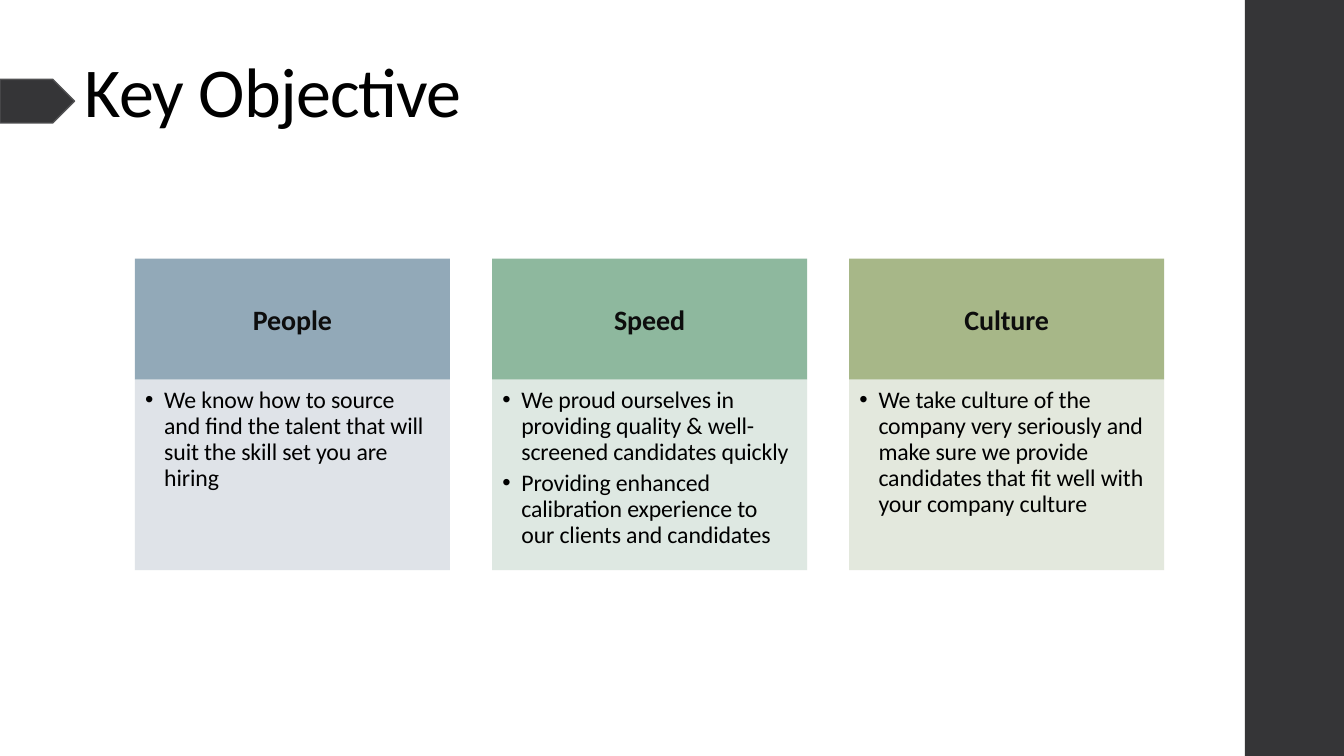
from dataclasses import dataclass

from lxml import etree
from pptx import Presentation
from pptx.dml.color import RGBColor
from pptx.enum.shapes import MSO_SHAPE
from pptx.enum.text import MSO_ANCHOR, PP_ALIGN
from pptx.oxml.ns import qn
from pptx.util import Cm, Pt

RECT, PENTAGON = MSO_SHAPE.RECTANGLE, MSO_SHAPE.PENTAGON
TOP, MIDDLE = MSO_ANCHOR.TOP, MSO_ANCHOR.MIDDLE
LEFT, CENTER = PP_ALIGN.LEFT, PP_ALIGN.CENTER


@dataclass(frozen=True)
class Theme:
    font: str = "Calibri"
    dark: str = "353537"
    edge: str = "505052"
    text: str = "000000"
    heading: str = "0D0D0D"
    title_size: float = 50
    heading_size: float = 20
    body_size: float = 17


# Heading, header colour, body colour, bullets
CARDS = [
    ("People", "92A9B8", "DCE1E6", [
        "We know how to source\nand find the talent that will\n"
        "suit the skill set you are\nhiring"]),
    ("Speed", "8EB89E", "DBE6DF", [
        "We proud ourselves in\nproviding quality & well-\n"
        "screened candidates quickly",
        "Providing enhanced\ncalibration experience to\n"
        "our clients and candidates"]),
    ("Culture", "A7B788", "E0E6DA", [
        "We take culture of the\ncompany very seriously and\n"
        "make sure we provide\ncandidates that fit well with\n"
        "your company culture"]),
]
CARD_LEFT, CARD_TOP, CARD_WIDTH, CARD_PITCH = 3.4, 6.52, 7.94, 9.0
HEADER_HEIGHT, BODY_HEIGHT = 3.05, 4.8


class SlideBuilder:
    def __init__(self, slide, theme):
        self.slide, self.theme = slide, theme

    def shape(self, kind, box, fill, line=None, opacity=None):
        s = self.slide.shapes.add_shape(kind, *map(Cm, box))
        s.shadow.inherit = False
        s.fill.solid()
        s.fill.fore_color.rgb = RGBColor.from_string(fill)
        if opacity:
            color = s.element.spPr.find(".//" + qn("a:srgbClr"))
            etree.SubElement(color, qn("a:alpha"), val=str(opacity * 1000))
        if line:
            s.line.color.rgb = RGBColor.from_string(line)
            s.line.width = Pt(1)
        else:
            s.line.fill.background()
        return s

    def frame(self, s, anchor, top=0):
        tf = s.text_frame
        values = {"word_wrap": True, "vertical_anchor": anchor,
                  "margin_left": 0, "margin_right": 0,
                  "margin_top": Cm(top), "margin_bottom": 0}
        for name, value in values.items():
            setattr(tf, name, value)
        return tf

    def add_text(self, p, text, size, color, align=LEFT, bold=False,
                 spacing=-10):
        p.alignment = align
        for i, line in enumerate(text.split("\n")):
            if i:
                p.add_line_break()
            r = p.add_run()
            r.text = line
            values = {"name": self.theme.font, "size": Pt(size), "bold": bold}
            for name, value in values.items():
                setattr(r.font, name, value)
            r.font.color.rgb = RGBColor.from_string(color)
            r._r.get_or_add_rPr().set("spc", str(spacing))

    def title(self, text, box):
        tf = self.frame(self.slide.shapes.add_textbox(*map(Cm, box)), TOP)
        self.add_text(tf.paragraphs[0], text, self.theme.title_size,
                      self.theme.text, spacing=-60)

    def header(self, text, box, fill):
        tf = self.frame(self.shape(RECT, box, fill), MIDDLE)
        self.add_text(tf.paragraphs[0], text, self.theme.heading_size,
                      self.theme.heading, CENTER, bold=True)

    def bullets(self, items, box, fill):
        tf = self.frame(self.shape(RECT, box, fill, opacity=90), TOP, 0.2)
        for i, item in enumerate(items):
            p = tf.add_paragraph() if i else tf.paragraphs[0]
            pPr = p._p.get_or_add_pPr()
            pPr.set("marL", str(Cm(0.74)))
            pPr.set("indent", str(-Cm(0.48)))
            etree.SubElement(pPr, qn("a:buFont"), typeface="Arial")
            etree.SubElement(pPr, qn("a:buChar"), char="•")
            p.line_spacing = 0.91
            if i:
                p.space_before = Pt(3.4)
            self.add_text(p, item, self.theme.body_size, self.theme.text)


def main():
    prs = Presentation()
    prs.slide_width, prs.slide_height = Cm(33.87), Cm(19.05)
    theme = Theme()
    page = SlideBuilder(prs.slides.add_slide(prs.slide_layouts[6]), theme)

    # Side band, title and its marker
    page.shape(RECT, (31.37, 0, 2.5, 19.05), theme.dark)
    page.title("Key Objective", (2.14, 1.2, 12, 2.18))
    page.shape(PENTAGON, (0, 2, 1.88, 1.1), theme.dark, theme.edge)

    # Cards in equal columns
    for i, (heading, head_fill, body_fill, items) in enumerate(CARDS):
        left = CARD_LEFT + i * CARD_PITCH
        page.header(heading, (left, CARD_TOP, CARD_WIDTH, HEADER_HEIGHT),
                    head_fill)
        page.bullets(items, (left, CARD_TOP + HEADER_HEIGHT, CARD_WIDTH,
                             BODY_HEIGHT), body_fill)

    prs.save("out.pptx")


if __name__ == "__main__":
    main()
